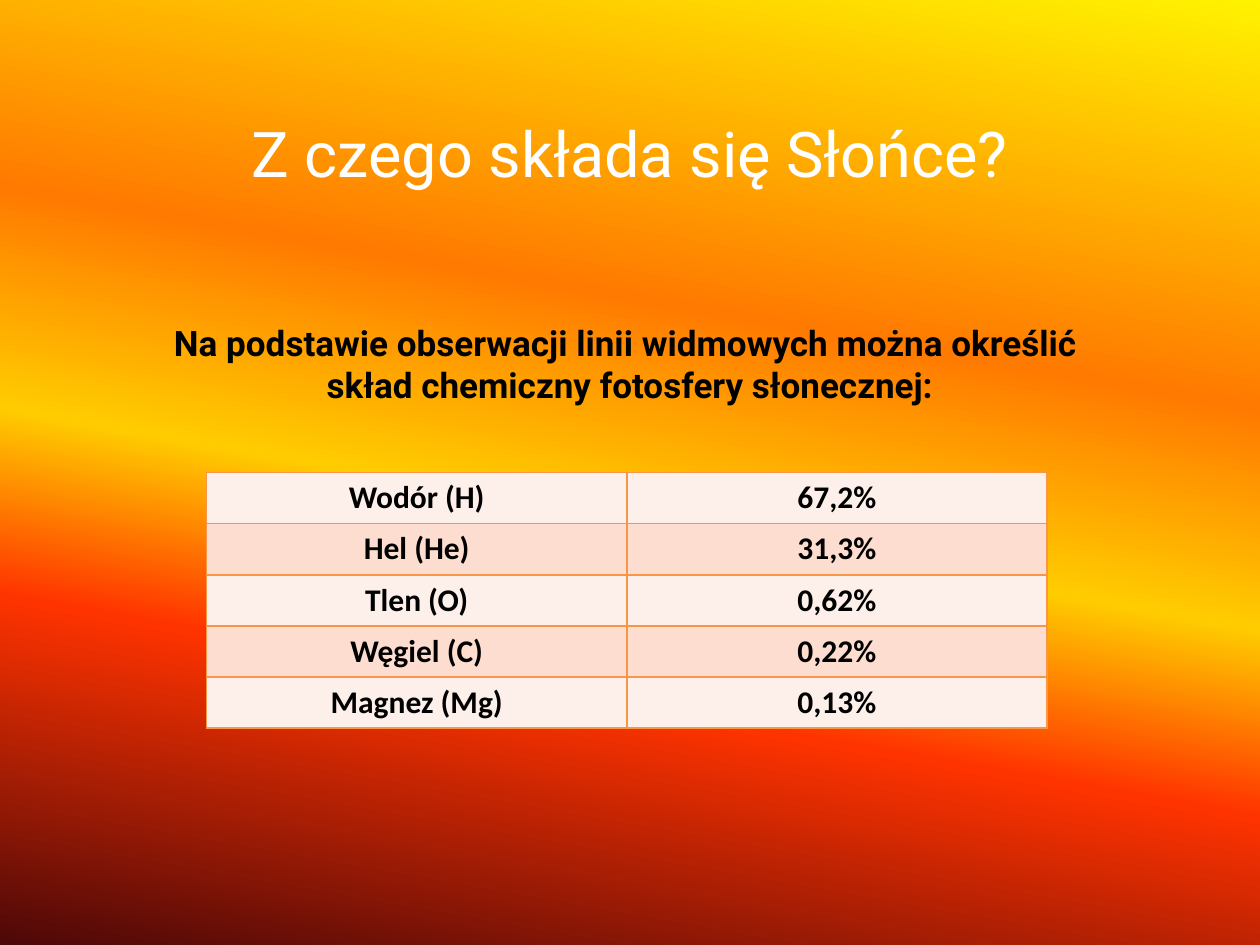
import pptx
import pptx.dml.color
import pptx.enum.text
import pptx.oxml
import pptx.oxml.ns
import pptx.util
from pptx.util import Inches

RGBColor = pptx.dml.color.RGBColor
PP_ALIGN = pptx.enum.text.PP_ALIGN
MSO_ANCHOR = pptx.enum.text.MSO_ANCHOR
MSO_AUTO_SIZE = pptx.enum.text.MSO_AUTO_SIZE

WHITE = RGBColor(0xFF, 0xFF, 0xFF)
BLACK = RGBColor(0x00, 0x00, 0x00)
BORDER_ORANGE = RGBColor(0xF7, 0x96, 0x46)
ROW_TINTS = (RGBColor(0xFD, 0xEF, 0xE9), RGBColor(0xFC, 0xDD, 0xCF))
SUN_STOPS = (
    (0, RGBColor(0xFF, 0xF2, 0x00), 100),
    (35, RGBColor(0xFF, 0x7A, 0x00), 100),
    (54, RGBColor(0xFF, 0xCC, 0x00), 100),
    (70, RGBColor(0xFF, 0x33, 0x00), 97),
    (100, RGBColor(0x4D, 0x08, 0x08), 100),
)
SUN_ANGLE = 100

COMPOSITION = (
    ("Wodór (H)", "67,2%"),
    ("Hel (He)", "31,3%"),
    ("Tlen (O)", "0,62%"),
    ("Węgiel (C)", "0,22%"),
    ("Magnez (Mg)", "0,13%"),
)
INTRO_LINES = (
    "Na podstawie obserwacji linii widmowych można określić ",
    "skład chemiczny fotosfery słonecznej:",
)
NAMESPACE = pptx.oxml.ns.nsdecls("a")


def paint_background(slide):
    fill = slide.background.fill
    fill.gradient()
    fill.gradient_angle = 360 - SUN_ANGLE
    stops = slide.element.find(".//" + pptx.oxml.ns.qn("a:gsLst"))
    for stop in list(stops):
        stops.remove(stop)
    for position, color, opacity in SUN_STOPS:
        alpha = f'<a:alpha val="{opacity * 1000}"/>' if opacity < 100 else ""
        stops.append(pptx.oxml.parse_xml(
            f'<a:gs {NAMESPACE} pos="{position * 1000}">'
            f'<a:srgbClr val="{color}">{alpha}</a:srgbClr></a:gs>'))


def write_lines(frame, lines, font, size, color, bold=False):
    for index, line in enumerate(lines):
        paragraph = frame.paragraphs[0] if index == 0 else frame.add_paragraph()
        paragraph.alignment = PP_ALIGN.CENTER
        run = paragraph.add_run()
        run.text = line
        run.font.name = font
        run.font.size = pptx.util.Pt(size)
        run.font.bold = bold
        run.font.color.rgb = color


def fit_frame(frame):
    frame.word_wrap = True
    frame.auto_size = MSO_AUTO_SIZE.SHAPE_TO_FIT_TEXT
    frame.vertical_anchor = MSO_ANCHOR.TOP


def place_title(slide, left, top, width, height):
    title = slide.shapes.title
    title.left, title.top, title.width, title.height = left, top, width, height
    fit_frame(title.text_frame)
    write_lines(title.text_frame, ["Z czego składa się Słońce?"], "Roboto", 36, WHITE)


def place_intro(slide, left, top, width, height):
    intro = slide.shapes.add_textbox(left, top, width, height)
    fit_frame(intro.text_frame)
    write_lines(intro.text_frame, INTRO_LINES, "Roboto", 20, BLACK, bold=True)


def outline_cell(cell):
    properties = cell._tc.get_or_add_tcPr()
    for index, side in enumerate(("lnL", "lnR", "lnT", "lnB")):
        properties.insert(index, pptx.oxml.parse_xml(
            f'<a:{side} {NAMESPACE} w="{pptx.util.Pt(1)}"><a:solidFill>'
            f'<a:srgbClr val="{BORDER_ORANGE}"/></a:solidFill></a:{side}>'))


def place_composition(slide, left, top, width, height):
    composition = slide.shapes.add_table(
        len(COMPOSITION), 2, left, top, width, height).table
    composition.first_row = False
    for row, entry in enumerate(COMPOSITION):
        for column, label in enumerate(entry):
            cell = composition.cell(row, column)
            cell.fill.solid()
            cell.fill.fore_color.rgb = ROW_TINTS[row % 2]
            outline_cell(cell)
            write_lines(cell.text_frame, [label], "Calibri", 18, BLACK, bold=True)


def main():
    presentation = pptx.Presentation()
    presentation.slide_width = Inches(10)
    presentation.slide_height = Inches(7.5)
    slide = presentation.slides.add_slide(presentation.slide_layouts[5])
    paint_background(slide)
    place_intro(slide, Inches(0), Inches(2.5), Inches(10), Inches(0.77))
    place_title(slide, Inches(0), Inches(0.86), Inches(10), Inches(0.71))
    place_composition(slide, Inches(1.64), Inches(3.75), Inches(6.67), Inches(2.03))
    presentation.save("out.pptx")


if __name__ == "__main__":
    main()
